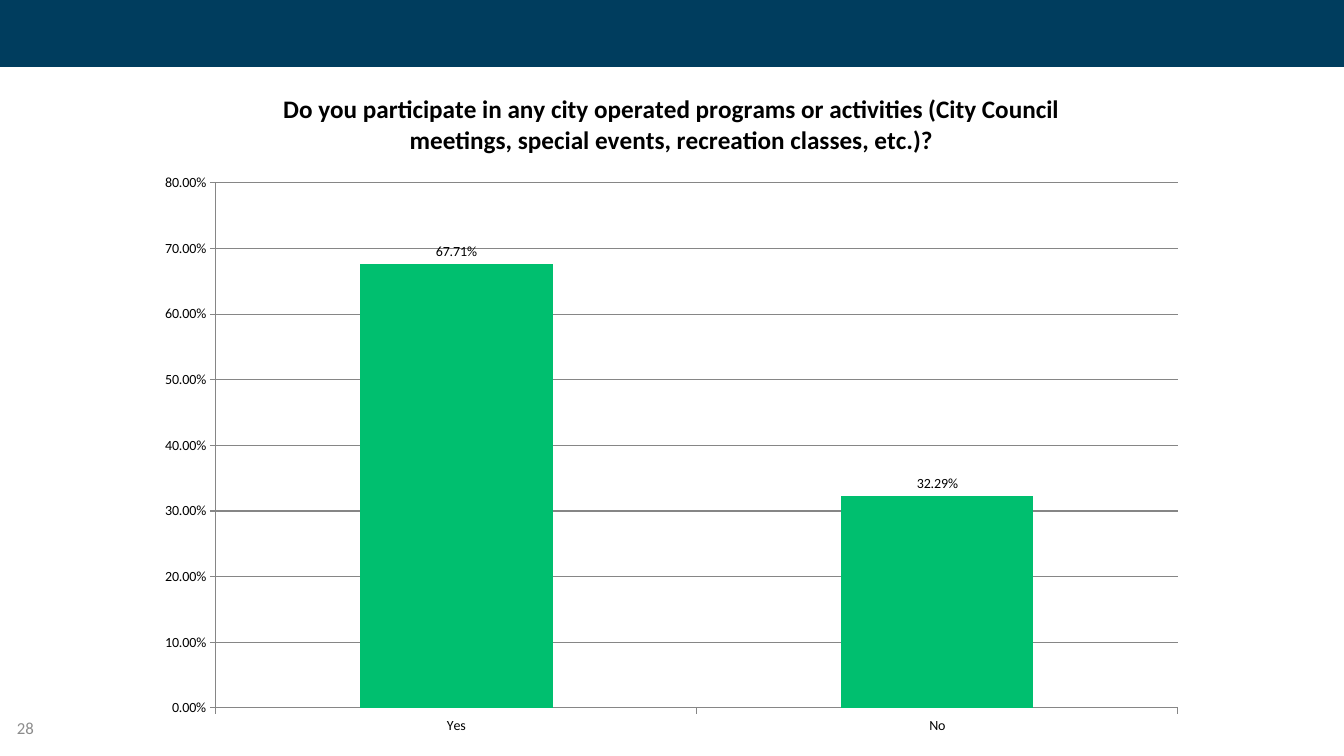
from dataclasses import dataclass

from lxml import etree
from pptx import Presentation
from pptx.chart.data import CategoryChartData
from pptx.dml.color import RGBColor
from pptx.enum.chart import XL_CHART_TYPE as ChartType
from pptx.enum.chart import XL_LABEL_POSITION as LabelPos
from pptx.enum.chart import XL_TICK_MARK as Tick
from pptx.enum.shapes import MSO_SHAPE as Shape
from pptx.enum.text import MSO_ANCHOR as Anchor
from pptx.oxml.ns import qn
from pptx.util import Emu, Pt


@dataclass(frozen=True)
class Theme:
    """Colours, font and type sizes of the slide."""
    font: str = "Calibri"
    band: str = "003D5E"
    bar: str = "00BF6F"
    text: str = "000000"
    muted: str = "8C8C8C"
    rule: str = "868686"
    title_size: int = 18
    number_size: int = 12
    label_size: int = 10


THEME = Theme()
QUESTION = ("Do you participate in any city operated programs or activities "
            "(City Council meetings, special events, recreation classes, etc.)?")
ANSWERS = {"Yes": 0.6771, "No": 0.3229}
PERCENT = "0.00%"
CHART_BOX = (144, 68, 1055, 680)
PLOT_BOX = (216, 183, 962, 525)


def px(n):
    """Turn pixels into EMU."""
    return Emu(round(n * 914400 / 100.8))


def style_font(font, size, color=THEME.text, bold=False):
    """Format a font."""
    font.name, font.size, font.bold = THEME.font, Pt(size), bold
    font.color.rgb = RGBColor.from_string(color)


def add_text(s, text, box, size, color=THEME.text, bold=False, anchor=Anchor.MIDDLE):
    """Add a text box with one formatted run."""
    tf = s.shapes.add_textbox(*map(px, box)).text_frame
    tf.word_wrap, tf.vertical_anchor = True, anchor
    r = tf.paragraphs[0].add_run()
    r.text = text
    style_font(r.font, size, color, bold)


def add_band(s, box, color):
    """Add a plain filled band."""
    sp = s.shapes.add_shape(Shape.RECTANGLE, *map(px, box))
    sp.shadow.inherit = False
    sp.fill.solid()
    sp.fill.fore_color.rgb = RGBColor.from_string(color)
    sp.line.fill.background()


def style_line(fmt):
    """Give an axis or gridline its thin rule."""
    fmt.line.color.rgb = RGBColor.from_string(THEME.rule)
    fmt.line.width = Pt(0.75)


def place_plot(chart, chart_box, plot_box):
    """Fix the inner plot area inside the chart frame."""
    area = chart.plots[0]._element.getparent()
    for old in area.findall(qn("c:layout")):
        area.remove(old)
    layout = etree.Element(qn("c:layout"))
    area.insert(0, layout)
    manual = etree.SubElement(layout, qn("c:manualLayout"))
    left, top, width, height = chart_box
    x, y, w, h = plot_box
    settings = {"layoutTarget": "inner", "xMode": "edge", "yMode": "edge",
                "x": round((x - left) / width, 4), "y": round((y - top) / height, 4),
                "w": round(w / width, 4), "h": round(h / height, 4)}
    for name, value in settings.items():
        etree.SubElement(manual, qn(f"c:{name}")).set("val", str(value))


def style_axes(chart):
    """Format both axes and the gridlines."""
    for axis in (chart.category_axis, chart.value_axis):
        axis.major_tick_mark, axis.minor_tick_mark = Tick.OUTSIDE, Tick.NONE
        style_line(axis.format)
        style_font(axis.tick_labels.font, THEME.label_size)
    axis = chart.value_axis
    axis.minimum_scale, axis.maximum_scale, axis.major_unit = 0, 0.8, 0.1
    axis.tick_labels.number_format = PERCENT
    axis.tick_labels.number_format_is_linked = False
    axis.has_major_gridlines = True
    style_line(axis.major_gridlines.format)


def style_bars(plot):
    """Format the columns and their value labels."""
    plot.gap_width, plot.vary_by_categories = 150, False
    series = plot.series[0]
    series.format.fill.solid()
    series.format.fill.fore_color.rgb = RGBColor.from_string(THEME.bar)
    labels = series.data_labels
    labels.show_value, labels.position = True, LabelPos.OUTSIDE_END
    labels.number_format, labels.number_format_is_linked = PERCENT, False
    style_font(labels.font, THEME.label_size)


def add_answer_chart(s, title, answers):
    """Add the titled column chart of answer shares."""
    data = CategoryChartData(number_format=PERCENT)
    data.categories = list(answers)
    data.add_series("Series 1", list(answers.values()))
    frame = s.shapes.add_chart(ChartType.COLUMN_CLUSTERED, *map(px, CHART_BOX), data)
    chart = frame.chart
    style_font(chart.font, THEME.label_size)
    chart.has_legend, chart.has_title = False, True
    p = chart.chart_title.text_frame.paragraphs[0]
    r = p.add_run()
    r.text = title
    style_font(r.font, THEME.title_size, bold=True)
    chart.chart_title.include_in_layout = False
    style_axes(chart)
    style_bars(chart.plots[0])
    place_plot(chart, CHART_BOX, PLOT_BOX)


def main():
    """Build and save the slide."""
    prs = Presentation()
    prs.slide_width, prs.slide_height = px(1344), px(756)
    s = prs.slides.add_slide(prs.slide_layouts[6])
    add_band(s, (0, 0, 1344, 67), THEME.band)
    add_text(s, "28", (7, 708, 84, 40), THEME.number_size, THEME.muted)
    add_answer_chart(s, QUESTION, ANSWERS)
    prs.save("out.pptx")


if __name__ == "__main__":
    main()
